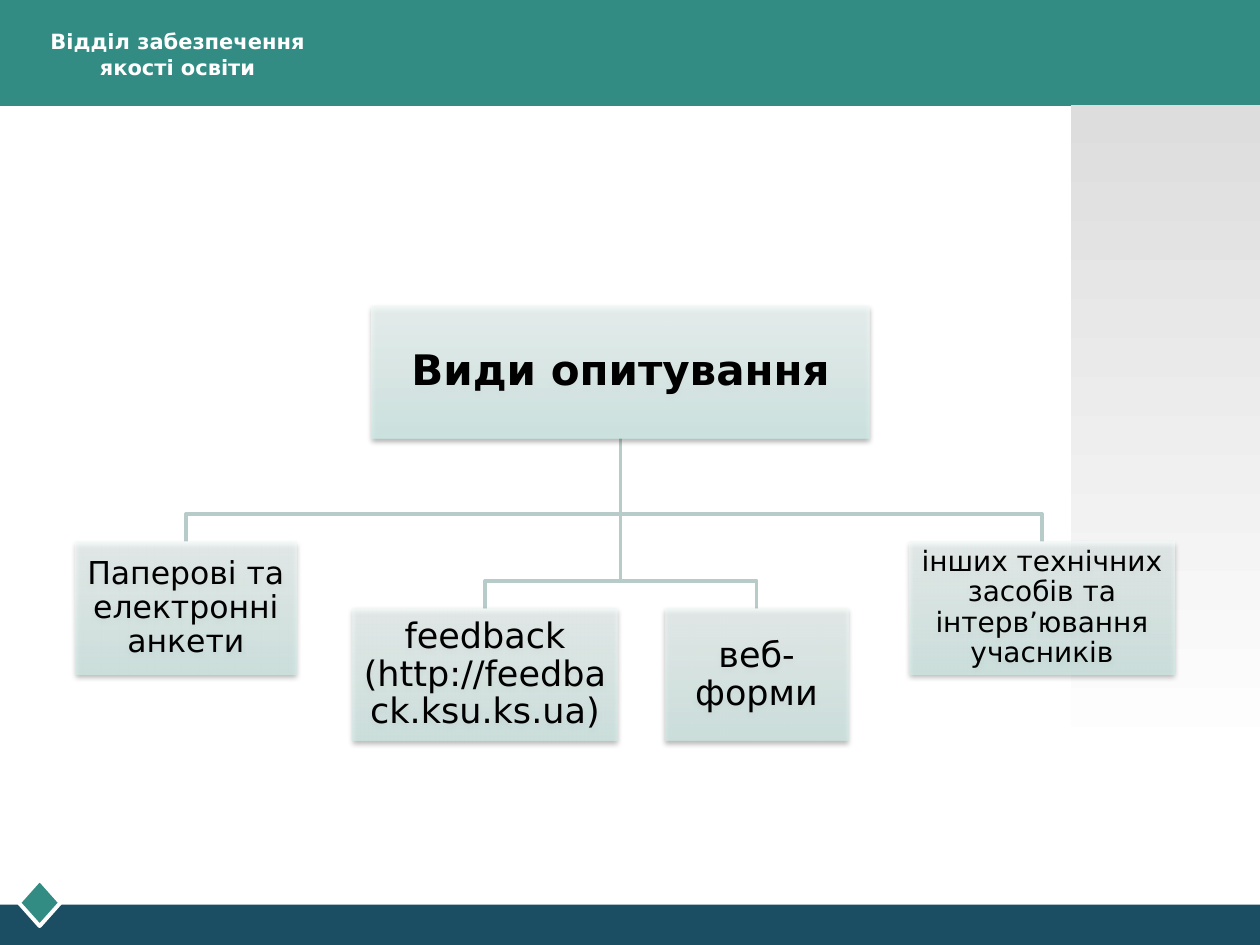
from lxml import etree
from pptx import Presentation
from pptx.dml.color import RGBColor
from pptx.enum import shapes as sh, text as tx
from pptx.oxml import ns
from pptx.util import Inches, Pt

THEME = {
    "font": "DejaVu Sans",
    "teal": "328C83", "navy": "1B4E63", "white": "FFFFFF", "black": "000000",
    "line": "B7CCC8", "panel": [(0, "DDDDDD"), (100, "FFFFFF")],
    "box": [(0, "D2EEE9"), (35, "DEF2EF"), (100, "F2FBF9")],
    "head": 12, "root": 24,
}
HEAD = "Відділ забезпечення якості освіти"
ROOT = ("Види опитування", 2.95, 2.43, 3.95)
KIDS = [
    ("Паперові та електронні анкети", 0.6, 4.3, 1.75, 18),
    ("feedback (http://feedback.ksu.ks.ua)", 2.8, 4.83, 2.1, 20),
    ("веб-форми", 5.28, 4.83, 1.45, 20),
    ("інших технічних засобів та інтерв’ювання учасників", 7.22, 4.3, 2.1, 16),
]
TALL, DROP, INSET = 1.05, 0.22, 0.03


def color(name):
    return RGBColor.from_string(THEME[name])


def plain(slide, kind, place, fill=None):
    shape = slide.shapes.add_shape(kind, *map(Inches, place))
    shape.shadow.inherit = False
    shape.line.fill.background()
    if fill:
        shape.fill.solid()
        shape.fill.fore_color.rgb = color(fill)
    return shape


def fade(shape, stops, angle, alpha=100):
    marks = "".join(
        f'<a:gs pos="{pos * 1000}"><a:srgbClr val="{rgb}">'
        f'<a:alpha val="{alpha * 1000}"/></a:srgbClr></a:gs>'
        for pos, rgb in stops)
    grad = etree.fromstring(
        f'<a:gradFill {ns.nsdecls("a")} rotWithShape="1"><a:gsLst>{marks}</a:gsLst>'
        f'<a:lin ang="{angle * 60000}" scaled="0"/></a:gradFill>')
    shape._element.spPr.find(ns.qn("a:prstGeom")).addnext(grad)


def shade(shape):
    cast = etree.fromstring(
        f'<a:outerShdw {ns.nsdecls("a")} blurRad="40000" dist="20000" dir="5400000" '
        'rotWithShape="0"><a:srgbClr val="000000"><a:alpha val="38000"/>'
        '</a:srgbClr></a:outerShdw>')
    shape._element.spPr.find(ns.qn("a:effectLst")).append(cast)


def write(shape, words, size, ink="black", bold=False, inset=None,
          anchor=tx.MSO_ANCHOR.MIDDLE):
    frame = shape.text_frame
    frame.text = words
    frame.word_wrap = True
    frame.auto_size = tx.MSO_AUTO_SIZE.NONE
    frame.vertical_anchor = anchor
    if inset is not None:
        frame.margin_left = frame.margin_right = Inches(inset)
        frame.margin_top = frame.margin_bottom = Inches(inset)
    para = frame.paragraphs[0]
    para.alignment = tx.PP_ALIGN.CENTER
    para.font.name = THEME["font"]
    para.font.size = Pt(size)
    para.font.bold = bold
    para.font.color.rgb = color(ink)
    return para


def node(slide, words, left, top, wide, size, alpha=70, bold=False):
    box = plain(slide, sh.MSO_SHAPE.RECTANGLE, (left, top, wide, TALL))
    fade(box, THEME["box"], 270, alpha)
    shade(box)
    write(box, words, size, bold=bold, inset=INSET).line_spacing = 0.9


def branch(slide, start, end):
    (x, y), (left, top) = start, end
    bend = top - DROP
    spots = [(x, bend), (left, bend), (left, top)]
    path = slide.shapes.build_freeform(Inches(x), Inches(y))
    path.add_line_segments([(Inches(a), Inches(b)) for a, b in spots], close=False)
    line = path.convert_to_shape()
    line.shadow.inherit = False
    line.fill.background()
    line.line.color.rgb = color("line")
    line.line.width = Pt(2)


def frame(slide):
    rect = sh.MSO_SHAPE.RECTANGLE
    plain(slide, rect, (0, 0, 10, 0.84), "teal")
    plain(slide, rect, (0, 7.18, 10, 0.32), "navy")
    gem = plain(slide, sh.MSO_SHAPE.DIAMOND, (0.15, 6.98, 0.33, 0.37), "teal")
    gem.line.color.rgb = color("white")
    gem.line.width = Pt(2.25)
    panel = plain(slide, rect, (8.5, 0.83, 1.5, 5.25))
    fade(panel, THEME["panel"], 90)
    title = slide.shapes.title
    title.left, title.top, title.width, title.height = map(
        Inches, (0.12, 0.18, 2.58, 0.66))
    write(title, HEAD, THEME["head"], "white", True, anchor=tx.MSO_ANCHOR.TOP)
    slide.shapes._spTree.append(title._element)


def main():
    deck = Presentation()
    deck.slide_width, deck.slide_height = Inches(10), Inches(7.5)
    slide = deck.slides.add_slide(deck.slide_layouts[5])
    frame(slide)
    _, left, top, wide = ROOT
    start = (left + wide / 2, top + TALL)
    for _, x, y, w, _ in reversed(KIDS):
        branch(slide, start, (x + w / 2, y))
    node(slide, *ROOT, THEME["root"], alpha=80, bold=True)
    for kid in KIDS:
        node(slide, *kid)
    deck.save("out.pptx")


if __name__ == "__main__":
    main()
